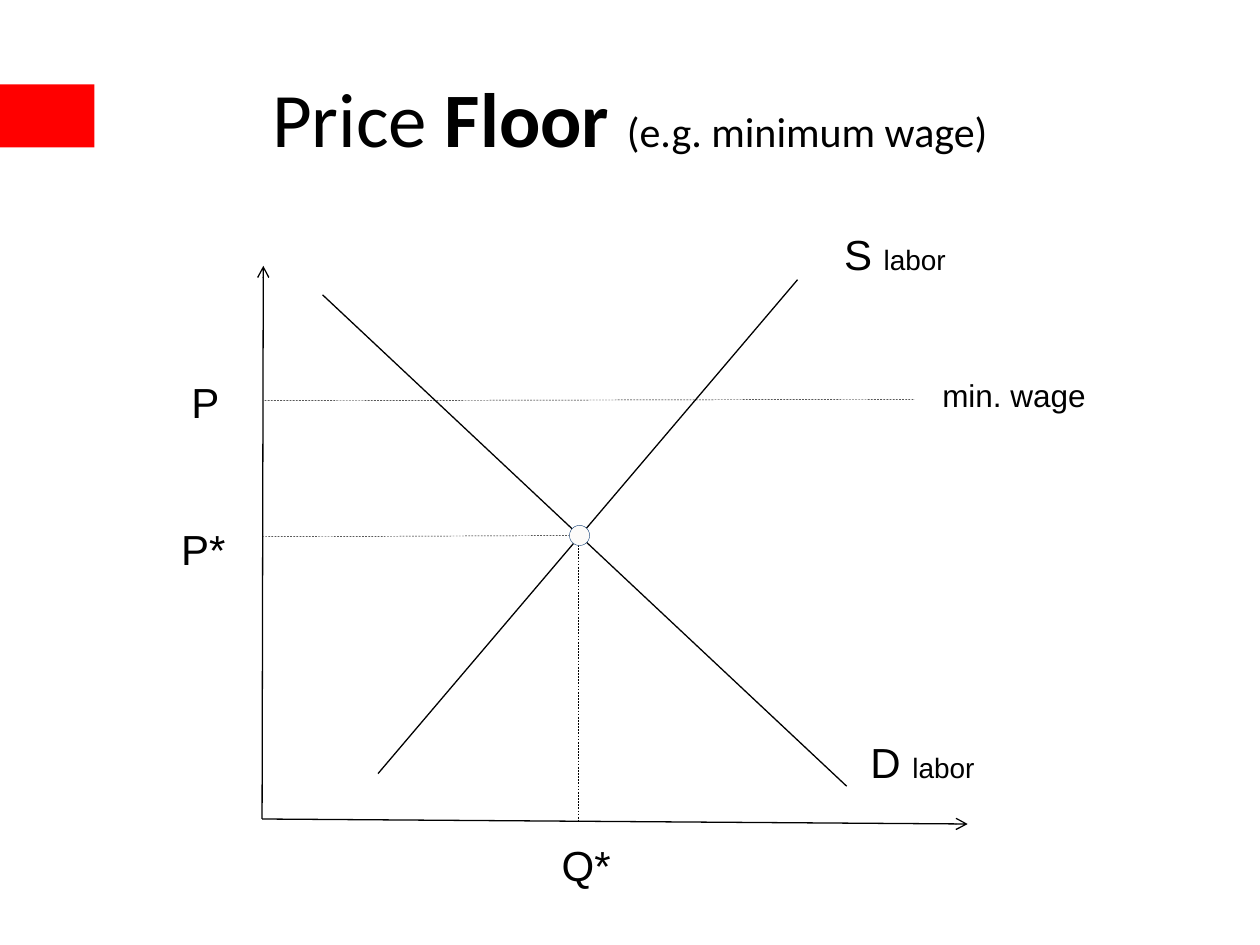
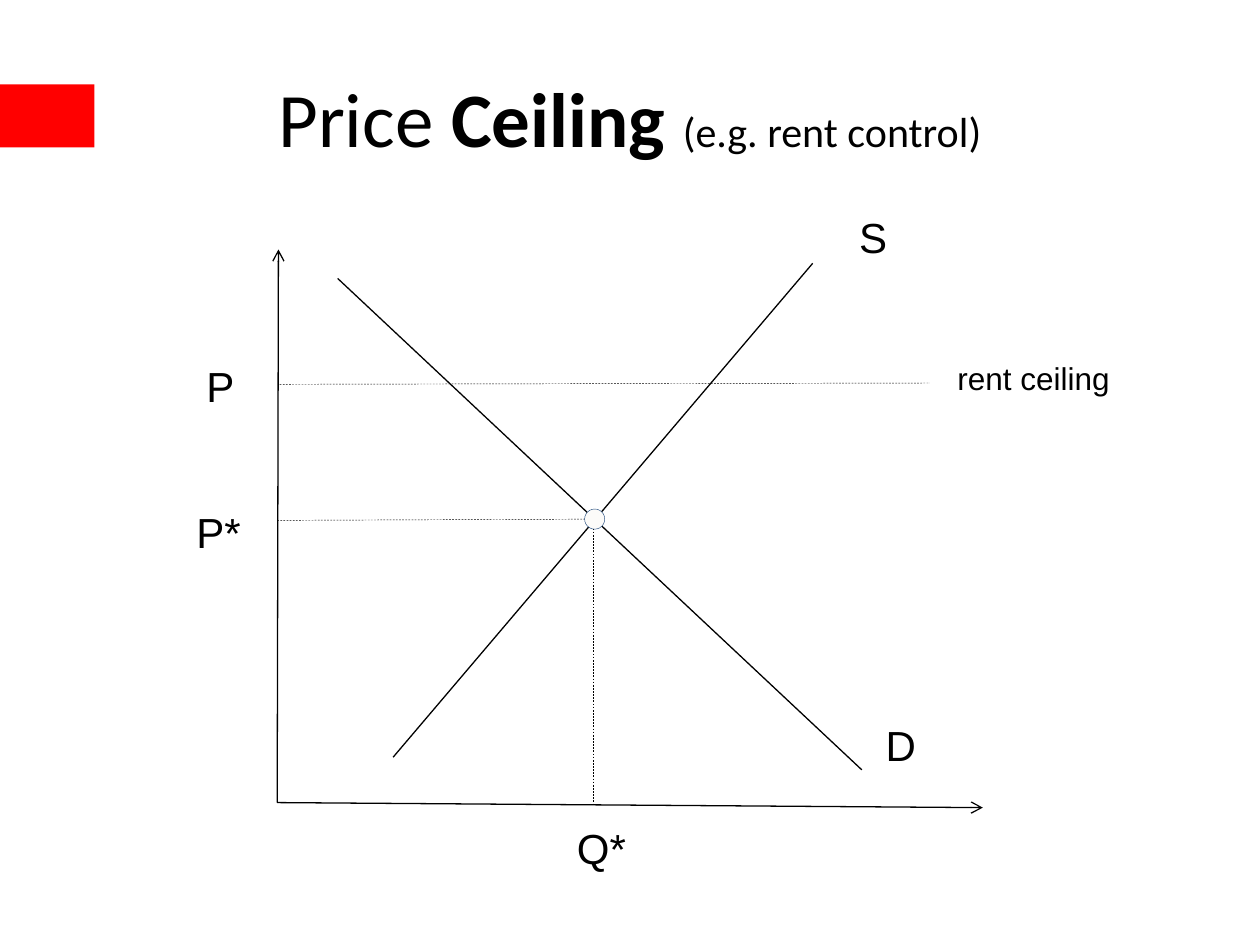
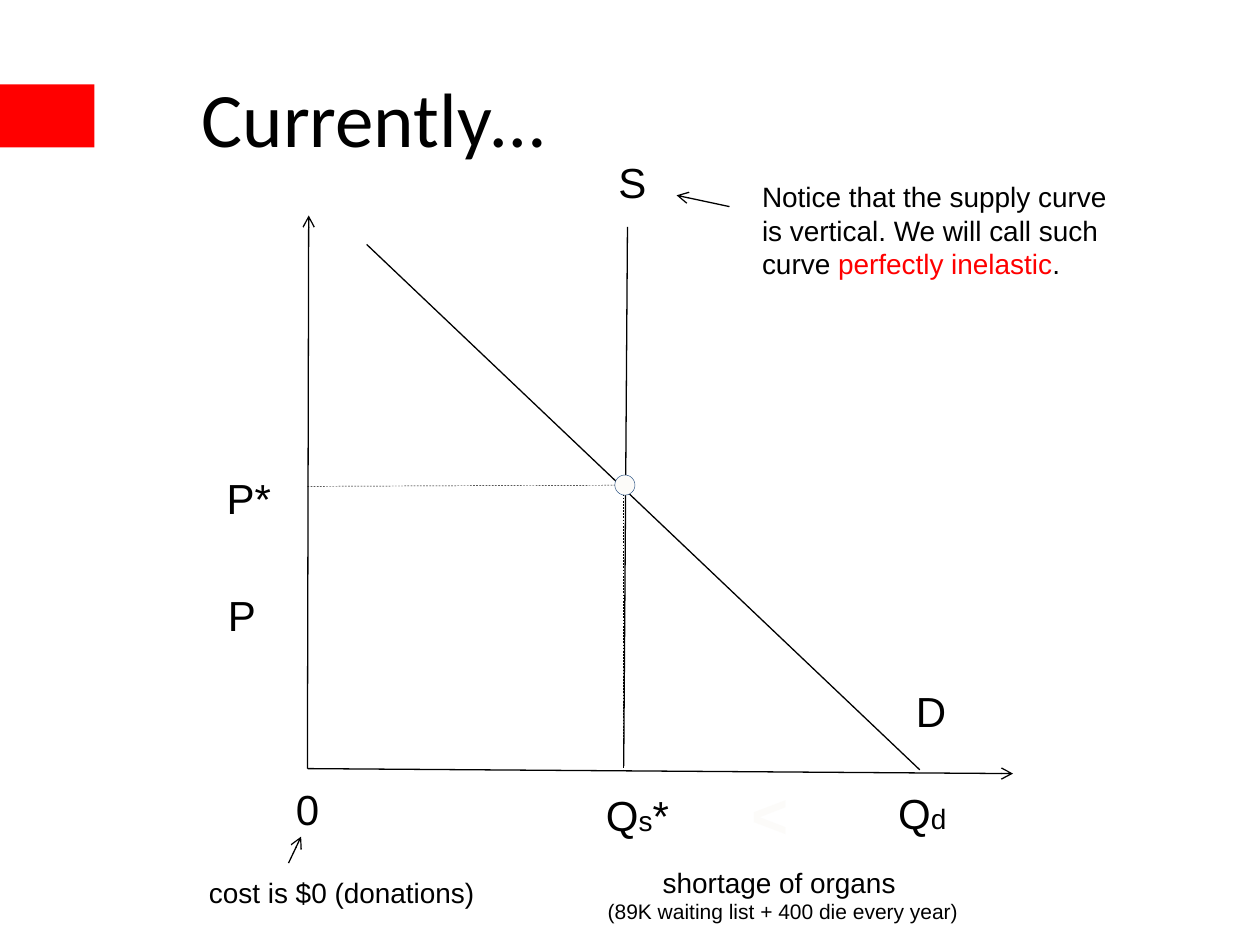
from dataclasses import dataclass
from typing import Any

from lxml import etree
from pptx import Presentation
from pptx.dml.color import RGBColor
from pptx.enum.dml import MSO_LINE
from pptx.enum.shapes import MSO_CONNECTOR, MSO_SHAPE
from pptx.enum.text import MSO_ANCHOR, MSO_AUTO_SIZE, PP_ALIGN
from pptx.oxml.ns import qn
from pptx.util import Emu, Pt

STRAIGHT = MSO_CONNECTOR.STRAIGHT
DASH = MSO_LINE.DASH
RECTANGLE, OVAL = MSO_SHAPE.RECTANGLE, MSO_SHAPE.OVAL
LEFT, CENTER = PP_ALIGN.LEFT, PP_ALIGN.CENTER
MIDDLE = MSO_ANCHOR.MIDDLE
GROW = MSO_AUTO_SIZE.SHAPE_TO_FIT_TEXT
EMU_PER_PX = 9144


@dataclass(frozen=True)
class Theme:
    ink: RGBColor = RGBColor.from_string("000000")
    accent: RGBColor = RGBColor.from_string("FF0000")
    pale: RGBColor = RGBColor.from_string("FCFBF9")
    navy: RGBColor = RGBColor.from_string("1F497D")
    title_font: str = "Calibri"
    label_font: str = "Arial"
    title: int = 44
    sign: int = 36
    label: int = 24
    level: int = 18
    note: int = 16
    fine: int = 12
    curve: float = 0.75
    guide: float = 0.25


THEME = Theme()
BOX_HEIGHT = {THEME.sign: 59, THEME.label: 42, THEME.level: 34, THEME.note: 32}


@dataclass(frozen=True)
class Plot:
    slide: Any
    dx: int = 0
    dy: int = 0

    def at(self, x, y):
        return px(x + self.dx), px(y + self.dy)


def px(length):
    return Emu(length * EMU_PER_PX)


def add_run(paragraph, text, size, font=THEME.label_font, color=THEME.ink, bold=False):
    run = paragraph.add_run()
    run.text = text
    run.font.size = Pt(size)
    run.font.name = font
    run.font.color.rgb = color
    run.font.bold = bold


def add_solid(plot, kind, x, y, width, height, fill, outline=None):
    solid = plot.slide.shapes.add_shape(kind, *plot.at(x, y), px(width), px(height))
    solid.shadow.inherit = False
    solid.fill.solid()
    solid.fill.fore_color.rgb = fill
    if outline is None:
        solid.line.fill.background()
    else:
        solid.line.color.rgb = outline
        solid.line.width = Pt(THEME.guide)


def add_line(plot, start, end, guide=False, arrow=False):
    line = plot.slide.shapes.add_connector(STRAIGHT, *plot.at(*start), *plot.at(*end))
    line.line.color.rgb = THEME.ink
    line.line.width = Pt(THEME.guide if guide else THEME.curve)
    if guide:
        line.line.dash_style = DASH
    properties = line._element.spPr
    if arrow:
        etree.SubElement(properties.find(qn("a:ln")), qn("a:tailEnd"), type="arrow")
    etree.SubElement(properties, qn("a:effectLst"))


def add_label(plot, x, y, width, *rows, height=None, align=LEFT):
    height = height or BOX_HEIGHT[rows[0][0][1]]
    box = plot.slide.shapes.add_textbox(*plot.at(x, y), px(width), px(height))
    frame = box.text_frame
    frame.word_wrap = False
    frame.auto_size = GROW
    for index, row in enumerate(rows):
        paragraph = frame.paragraphs[0] if index == 0 else frame.add_paragraph()
        paragraph.alignment = align
        paragraph.line_spacing = 0.8
        if index:
            paragraph.space_before = Pt(round(row[0][1] * 0.23, 1))
        for text, size, *color in row:
            add_run(paragraph, text, size, color=color[0] if color else THEME.ink,
                    bold=size == THEME.sign)


def add_title(slide, *parts, align=CENTER, indent=10):
    box = slide.shapes.add_textbox(px(50), px(30), px(900), px(125))
    frame = box.text_frame
    frame.word_wrap = True
    frame.vertical_anchor = MIDDLE
    frame.margin_left = px(indent)
    frame.paragraphs[0].alignment = align
    for text, size, bold in parts:
        add_run(frame.paragraphs[0], text, size, THEME.title_font, bold=bold)


def new_slide(deck):
    slide = deck.slides.add_slide(deck.slide_layouts[6])
    add_solid(Plot(slide), RECTANGLE, 0, 67, 75, 50, THEME.accent)
    return slide


def draw_market(plot, demand, supply):
    add_line(plot, (459, 430), (459, 651), guide=True)
    add_line(plot, *demand)
    add_line(plot, (208, 650), (768, 654), arrow=True)
    add_line(plot, (208, 650), (209, 211), arrow=True)
    add_line(plot, *supply)
    add_line(plot, (208, 426), (468, 425), guide=True)
    add_solid(plot, OVAL, 452, 417, 16, 16, THEME.pale, THEME.navy)
    add_label(plot, 134, 418, 56, [("P*", THEME.label)])


def price_control_slide(deck, name, example, level, level_width, dx=0, dy=0, good=None):
    slide = new_slide(deck)
    plot = Plot(slide, dx, dy)
    add_title(slide, ("Price ", THEME.title, False), (name + " ", THEME.title, True),
              (example, THEME.label, False))
    draw_market(plot, ((672, 624), (256, 234)), ((300, 614), (633, 222)))
    add_line(plot, (210, 318), (726, 317), guide=True)
    add_label(plot, 436, 669, 59, [("Q*", THEME.label)])
    add_label(plot, 142, 302, 43, [("P", THEME.label)])
    for curve, x, y, width in (("S", 660, 184, 43), ("D", 681, 587, 45)):
        if good:
            add_label(plot, x, y, width + 59,
                      [(curve + " ", THEME.label), (good, THEME.note)])
        else:
            add_label(plot, x, y, width, [(curve, THEME.label)])
    add_label(plot, 738, 299, level_width, [(level, THEME.level)])


def organ_slide(deck):
    slide = new_slide(deck)
    plot = Plot(slide, 36, -40)
    add_title(slide, ("Currently…", THEME.title, False), align=LEFT, indent=110)
    draw_market(plot, ((694, 651), (255, 234)), ((459, 648), (462, 220)))
    add_label(plot, 435, 669, 72,
              [("Q", THEME.label), ("s", THEME.note), ("*", THEME.label)])
    add_label(plot, 667, 668, 59, [("Q", THEME.label), ("d", THEME.note)])
    for text, x, y, width in (("S", 445, 167, 43), ("D", 681, 587, 45),
                              ("P", 135, 511, 43), ("0", 189, 665, 39)):
        add_label(plot, x, y, width, [(text, THEME.label)])

    notes = Plot(slide)
    add_line(notes, (579, 164), (537, 155), arrow=True)
    add_label(notes, 595, 143, 297,
              [("Notice that the supply curve", THEME.note)],
              [("is vertical. We will call such", THEME.note)],
              [("curve ", THEME.note), ("perfectly inelastic", THEME.note, THEME.accent),
               (".", THEME.note)], height=85)
    add_line(notes, (229, 685), (239, 664), arrow=True)
    add_label(notes, 156, 695, 238, [("cost is $0 (donations)", THEME.note)])
    add_label(notes, 471, 687, 301, [("shortage of organs ", THEME.note)],
              [("(89K waiting list + 400 die every year)", THEME.fine)],
              height=52, align=CENTER)
    add_label(notes, 586, 622, 50, [("<", THEME.sign, THEME.pale)], align=CENTER)


def main():
    deck = Presentation()
    deck.slide_width, deck.slide_height = px(1000), px(750)
    price_control_slide(deck, "Floor", "(e.g. minimum wage)", "min. wage", 135, good="labor")
    price_control_slide(deck, "Ceiling", "(e.g. rent control)", "rent ceiling", 142, 12, -13)
    organ_slide(deck)
    deck.save("out.pptx")


if __name__ == "__main__":
    main()
